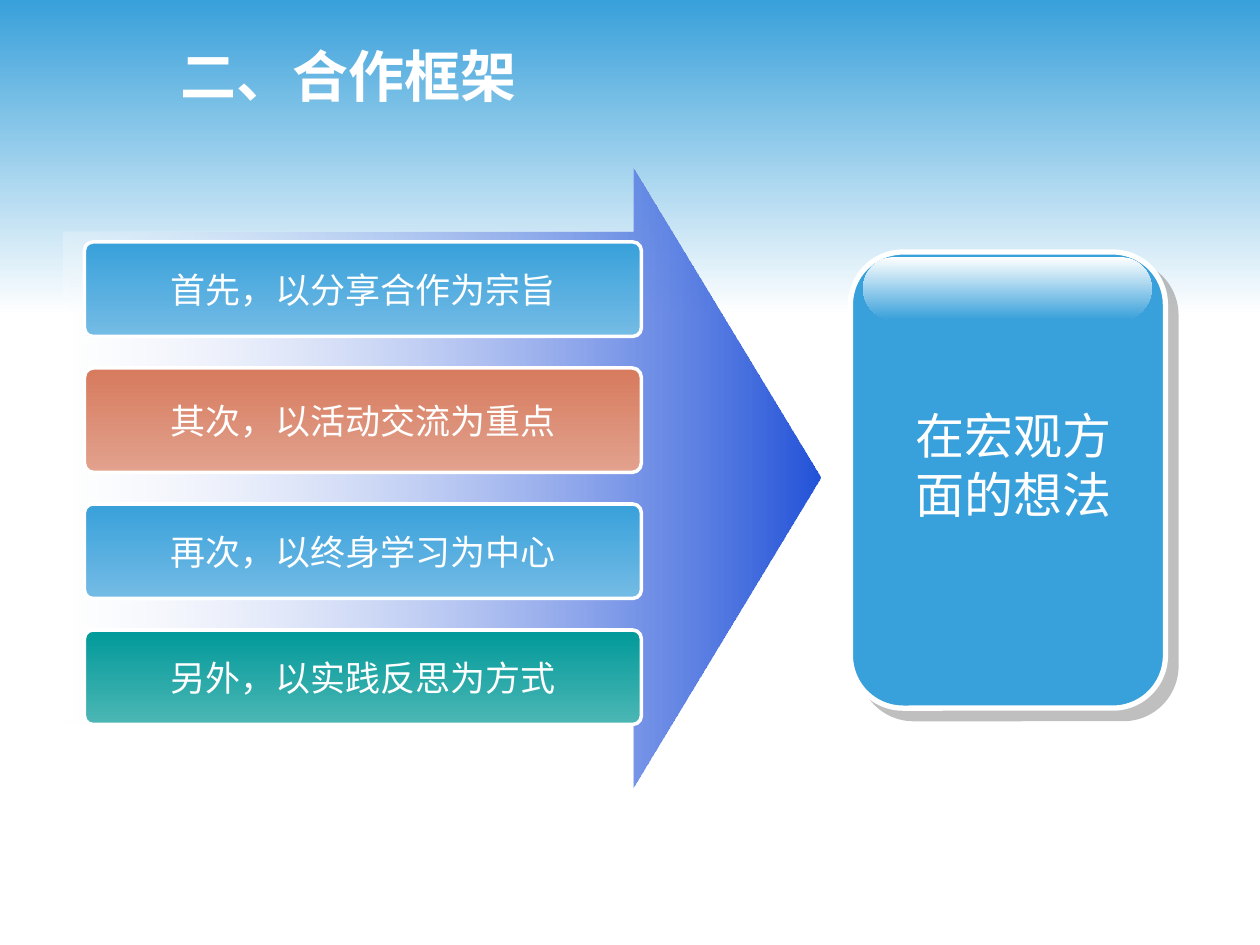
from dataclasses import dataclass

from lxml import etree
from pptx import Presentation
from pptx.dml.color import RGBColor as RGB
from pptx.enum.shapes import MSO_SHAPE as Shape
from pptx.enum.text import MSO_ANCHOR as Anchor, MSO_AUTO_SIZE as AutoSize, PP_ALIGN as Align
from pptx.oxml.ns import qn
from pptx.util import Inches, Pt


@dataclass(frozen=True)
class Theme:
    white: str = "FFFFFF"
    blue: str = "38A0DA"
    light_blue: str = "74BCE5"
    red: str = "D77A5D"
    light_red: str = "E2A28E"
    green: str = "009999"
    light_green: str = "4CB7B5"
    arrow: str = "2353D9"
    shadow: str = "808080"
    latin: str = "Arial"
    cjk: str = "Noto Sans CJK SC"
    title_size: int = 32
    panel_size: int = 28
    bar_size: int = 20


class SlideBuilder:
    def __init__(self, slide, theme):
        self.slide, self.theme = slide, theme

    def style(self, p, size, latin, bold=False):
        font = p.font
        font.size, font.name, font.bold = Pt(size), latin, bold
        font.color.rgb = RGB.from_string(self.theme.white)
        east_asian = etree.Element(qn("a:ea"), typeface=self.theme.cjk)
        p._p.pPr.find(qn("a:defRPr")).find(qn("a:latin")).addnext(east_asian)

    def shape(self, kind, box, fill, angle=270, line=None, adj=(), shapes=None):
        """Add a shape; fill is one colour or a (start, end) gradient."""
        sp = (shapes or self.slide.shapes).add_shape(kind, *map(Inches, box))
        sp.shadow.inherit = False
        for i, value in enumerate(adj):
            sp.adjustments[i] = value
        if isinstance(fill, str):
            sp.fill.solid()
            sp.fill.fore_color.rgb = RGB.from_string(fill)
        else:
            sp.fill.gradient()
            sp.fill.gradient_angle = angle
            for stop, position, color in zip(sp.fill.gradient_stops, (0, 1), fill):
                stop.position = position
                stop.color.rgb = RGB.from_string(color)
        if line:
            sp.line.color.rgb = RGB.from_string(self.theme.white)
            sp.line.width = Pt(line)
        else:
            sp.line.fill.background()
        return sp

    def title(self, text, box):
        sp = self.slide.shapes.title
        sp.left, sp.top, sp.width, sp.height = map(Inches, box)
        tf = sp.text_frame
        tf.text = text
        tf.vertical_anchor = Anchor.MIDDLE
        p = tf.paragraphs[0]
        p.alignment = Align.LEFT
        self.style(p, self.theme.title_size, self.theme.cjk, bold=True)

    def band(self, box):
        sp = self.shape(Shape.RECTANGLE, box, (self.theme.blue, self.theme.white))
        self.slide.shapes.title.element.addprevious(sp.element)

    def arrow(self, box):
        sp = self.shape(Shape.RIGHT_ARROW, box, (self.theme.white, self.theme.arrow),
                        angle=0, adj=(0.793, 0.303))
        first_color = next(sp.element.spPr.iter(qn("a:srgbClr")))
        etree.SubElement(first_color, qn("a:alpha"), val="24000")

    def bar(self, text, box, fill):
        sp = self.shape(Shape.ROUNDED_RECTANGLE, box, fill, line=2, adj=(0.09,))
        tf = sp.text_frame
        tf.text = text
        tf.word_wrap = False
        tf.vertical_anchor = Anchor.MIDDLE
        p = tf.paragraphs[0]
        p.alignment = Align.CENTER
        self.style(p, self.theme.bar_size, self.theme.latin)

    def panel(self, box, shine_box):
        shapes = self.slide.shapes.add_group_shape().shapes
        sp = self.shape(Shape.ROUNDED_RECTANGLE, box, self.theme.blue, line=3,
                        adj=(0.167,), shapes=shapes)
        effects = sp.element.spPr.find(qn("a:effectLst"))
        shadow = etree.SubElement(effects, qn("a:outerShdw"), dist=str(Pt(8.5)),
                                  dir="2700000", algn="ctr", rotWithShape="0")
        color = etree.SubElement(shadow, qn("a:srgbClr"), val=self.theme.shadow)
        etree.SubElement(color, qn("a:alpha"), val="50000")
        self.shape(Shape.ROUNDED_RECTANGLE, shine_box, (self.theme.white, self.theme.blue),
                   adj=(0.5,), shapes=shapes)

    def label(self, text, box):
        tf = self.slide.shapes.add_textbox(*map(Inches, box)).text_frame
        tf.word_wrap = True
        tf.auto_size = AutoSize.SHAPE_TO_FIT_TEXT
        tf.text = text
        self.style(tf.paragraphs[0], self.theme.panel_size, self.theme.latin)


def main():
    prs = Presentation()
    prs.slide_width, prs.slide_height = Inches(10), Inches(7.5)
    theme = Theme()
    s = SlideBuilder(prs.slides.add_slide(prs.slide_layouts[5]), theme)

    # Header
    s.band((0, 0, 10, 2.5))
    s.title("二、合作框架", (1.33, 0.33, 7.75, 0.53))

    # Arrow with the four principles
    s.arrow((0.5, 1.33, 6.01, 4.92))
    blue = (theme.blue, theme.light_blue)
    bars = [
        ("首先，以分享合作为宗旨", 0.75, blue),
        ("其次，以活动交流为重点", 0.83, (theme.red, theme.light_red)),
        ("再次，以终身学习为中心", 0.75, blue),
        ("另外，以实践反思为方式", 0.75, (theme.green, theme.light_green)),
    ]
    top, gap = 1.92, 0.25
    for text, height, fill in bars:
        s.bar(text, (0.67, top, 4.42, height), fill)
        top += height + gap

    # Result panel
    s.panel((6.75, 2, 2.5, 3.62), (6.85, 2.04, 2.29, 0.5))
    s.label("在宏观方面的想法", (7.17, 3.17, 1.92, 1.04))

    prs.save("out.pptx")


if __name__ == "__main__":
    main()
